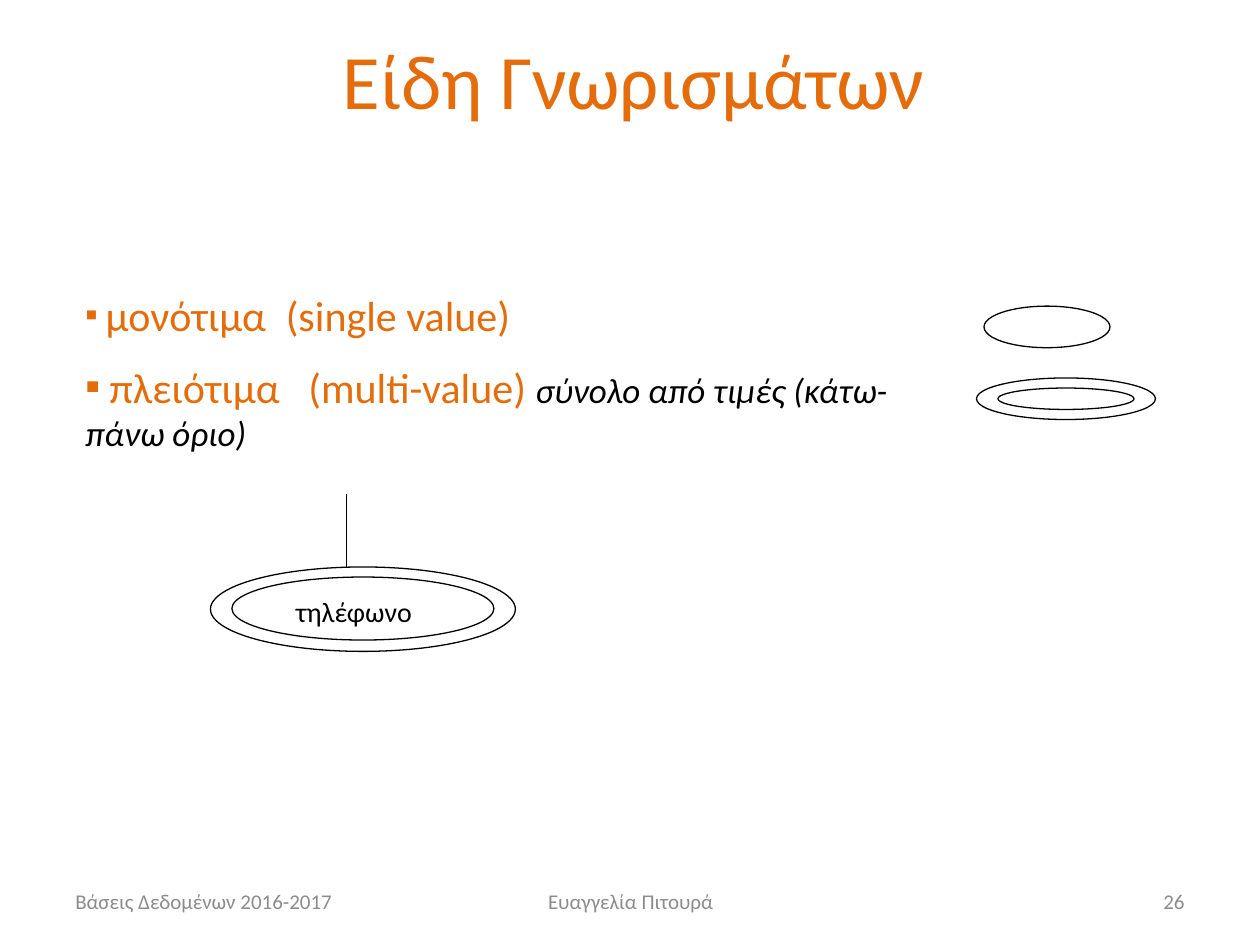
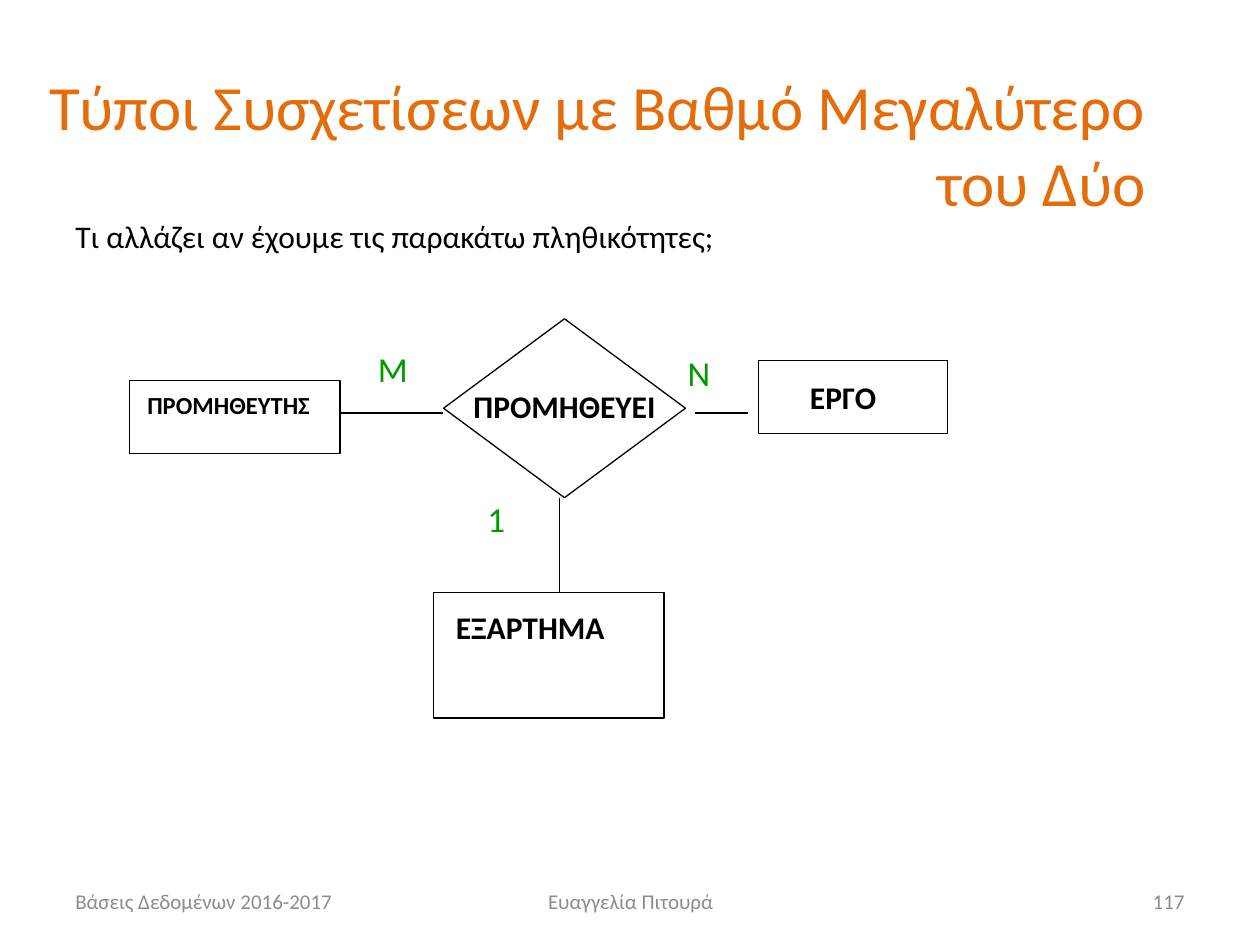
from lxml.etree import SubElement
from pptx import Presentation
from pptx.dml.color import RGBColor
from pptx.enum.shapes import MSO_CONNECTOR, MSO_SHAPE
from pptx.enum.text import MSO_ANCHOR, MSO_AUTO_SIZE, PP_ALIGN
from pptx.oxml.ns import qn
from pptx.util import Inches, Pt

FONT = "Calibri"
ORANGE = RGBColor(0xE4, 0x6C, 0x0A)
GREEN = RGBColor(0x00, 0x99, 0x00)
GRAY = RGBColor(0x8C, 0x8C, 0x8C)
BLACK = RGBColor(0, 0, 0)
LEFT, MID, RIGHT = PP_ALIGN.LEFT, PP_ALIGN.CENTER, PP_ALIGN.RIGHT
OVAL, RECT, DIAMOND = MSO_SHAPE.OVAL, MSO_SHAPE.RECTANGLE, MSO_SHAPE.DIAMOND

COURSE, AUTHOR = "Βάσεις Δεδομένων 2016-2017", "Ευαγγελία Πιτουρά"

# Bullets: tab stop in inches, then runs of (text, size, colour, italic)
BODY_BOX = (0.58, 2.25, 7, 1.45)
BULLETS = [
    (1.59, [(" ", 20, ORANGE, False),
            ("μονότιμα\t(single value)", 24, ORANGE, False)]),
    (1.77, [(" πλειότιμα\t(multi-value) ", 24, ORANGE, False),
            ("σύνολο από τιμές (κάτω-πάνω όριο)", 20, BLACK, True)]),
]

# Labels: text, box, size, colour, bold, alignment
# Shapes: kind, box; lines: from, to
SLIDES = [
    {
        "title": ("Είδη Γνωρισμάτων", (0.53, 0, 9, 1.25), 44, MID),
        "number": "26",
        "bullets": BULLETS,
        "shapes": [
            (OVAL, (7.81, 2.43, 1, 0.33)),
            (OVAL, (7.75, 3, 1.42, 0.33)),
            (OVAL, (7.92, 3.08, 1.08, 0.17)),
            (OVAL, (1.84, 4.58, 2.08, 0.5)),
            (OVAL, (1.67, 4.5, 2.42, 0.67)),
        ],
        "lines": [((2.75, 3.92), (2.75, 4.5))],
        "weight": 0.75,
        "labels": [("τηλέφωνο", (2.25, 4.67, 1.17, 0.37), 16, BLACK, False, LEFT)],
    },
    {
        "title": ("Τύποι Συσχετίσεων με Βαθμό Μεγαλύτερο του Δύο",
                  (0.19, 0.16, 9, 1.95), 36, RIGHT),
        "number": "117",
        "bullets": [],
        "shapes": [
            (RECT, (1.03, 3.02, 1.67, 0.58)),
            (RECT, (3.44, 4.7, 1.83, 1)),
            (RECT, (6.02, 2.86, 1.5, 0.58)),
            (DIAMOND, (3.52, 2.53, 1.92, 1.42)),
        ],
        "lines": [((2.69, 3.28), (3.52, 3.28)),
                  ((5.52, 3.28), (5.94, 3.28)),
                  ((4.44, 3.95), (4.44, 4.7))],
        "weight": 1,
        "labels": [
            ("ΠΡΟΜΗΘΕΥΤΗΣ", (0.95, 3.05, 1.73, 0.34), 14, BLACK, True, MID),
            ("ΕΡΓΟ", (6.33, 2.95, 2, 0.4), 18, BLACK, True, LEFT),
            ("ΕΞΑΡΤΗΜΑ", (3.52, 4.78, 2.33, 0.4), 18, BLACK, True, LEFT),
            ("ΠΡΟΜΗΘΕΥΕΙ", (3.66, 3.02, 1.67, 0.4), 18, BLACK, True, LEFT),
            ("M", (2.9, 2.71, 0.94, 0.43), 20, GREEN, False, LEFT),
            ("N", (5.36, 2.74, 0.55, 0.43), 20, GREEN, False, LEFT),
            ("1", (3.77, 3.9, 0.55, 0.43), 20, GREEN, False, LEFT),
            ("Τι αλλάζει αν έχουμε τις παρακάτω πληθικότητες;",
             (0.5, 1.67, 7.64, 0.4), 18, BLACK, False, LEFT),
        ],
    },
]


def inches(box):
    return [Inches(n) for n in box]


def add_frame(slide, box, fixed=False):
    """Add a wrapping text box: fixed and centred upright, or grown to its text."""
    frame = slide.shapes.add_textbox(*inches(box)).text_frame
    frame.word_wrap = True
    if fixed:
        frame.vertical_anchor = MSO_ANCHOR.MIDDLE
    else:
        frame.auto_size = MSO_AUTO_SIZE.SHAPE_TO_FIT_TEXT
    return frame


def add_run(para, text, size, color, bold=False, italic=False):
    run = para.add_run()
    run.text = text
    font = run.font
    font.name, font.size, font.color.rgb = FONT, Pt(size), color
    font.bold, font.italic = bold, italic


def add_text(slide, text, box, size, color, bold=False, align=LEFT, fixed=False):
    para = add_frame(slide, box, fixed).paragraphs[0]
    para.alignment = align
    add_run(para, text, size, color, bold)


def set_bullet(para, stop):
    """Give a paragraph a square orange bullet and one tab stop."""
    props = para._p.get_or_add_pPr()
    props.set("marL", "0")
    props.set("indent", "0")
    tint = SubElement(props, qn("a:buClr"))
    SubElement(tint, qn("a:srgbClr"), val=str(ORANGE))
    SubElement(props, qn("a:buFont"), typeface=FONT)
    SubElement(props, qn("a:buChar"), char="▪")
    tabs = SubElement(props, qn("a:tabLst"))
    SubElement(tabs, qn("a:tab"), pos=str(Inches(stop)), algn="l")


def add_bullets(slide, items):
    frame = add_frame(slide, BODY_BOX)
    for i, (stop, runs) in enumerate(items):
        para = frame.add_paragraph() if i else frame.paragraphs[0]
        if i:
            para.space_before = Pt(12)
        set_bullet(para, stop)
        for text, size, color, italic in runs:
            add_run(para, text, size, color, italic=italic)


def add_outline(slide, kind, box):
    shape = slide.shapes.add_shape(kind, *inches(box))
    shape.shadow.inherit = False
    shape.fill.background()
    shape.line.color.rgb = BLACK
    shape.line.width = Pt(0.75)


def add_line(slide, start, end, weight):
    line = slide.shapes.add_connector(MSO_CONNECTOR.STRAIGHT, *inches(start + end))
    line.line.color.rgb = BLACK
    line.line.width = Pt(weight)
    SubElement(line._element.spPr, qn("a:effectLst"))


def add_footer(slide, number):
    for text, left, width, align in [(COURSE, 0.5, 2.33, LEFT),
                                     (AUTHOR, 3.42, 3.17, MID),
                                     (number, 7.17, 2.33, RIGHT)]:
        add_text(slide, text, (left, 6.95, width, 0.4), 12, GRAY,
                 align=align, fixed=True)


def build(deck, data):
    slide = deck.slides.add_slide(deck.slide_layouts[6])
    text, box, size, align = data["title"]
    add_text(slide, text, box, size, ORANGE, align=align, fixed=True)
    if data["bullets"]:
        add_bullets(slide, data["bullets"])
    for kind, box in data["shapes"]:
        add_outline(slide, kind, box)
    for start, end in data["lines"]:
        add_line(slide, start, end, data["weight"])
    for label in data["labels"]:
        add_text(slide, *label)
    add_footer(slide, data["number"])


def main():
    deck = Presentation()
    deck.slide_width, deck.slide_height = Inches(10), Inches(7.5)
    for data in SLIDES:
        build(deck, data)
    deck.save("out.pptx")


if __name__ == "__main__":
    main()
